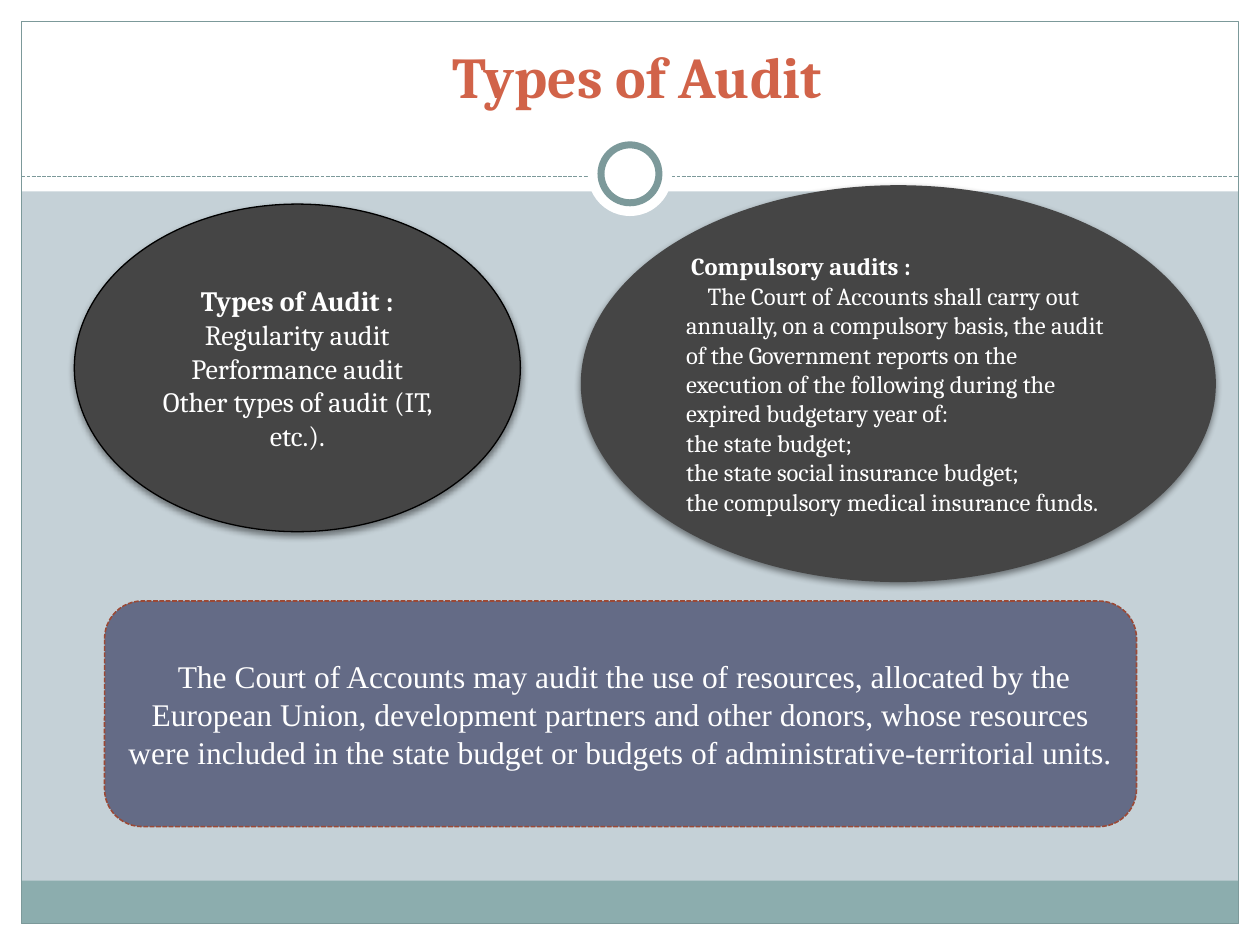
from lxml.etree import SubElement
from pptx import Presentation
from pptx.dml.color import RGBColor
from pptx.enum.dml import MSO_LINE_DASH_STYLE as Dash
from pptx.enum.shapes import MSO_CONNECTOR as Connector, MSO_SHAPE as Shape
from pptx.enum.text import MSO_ANCHOR as Anchor, PP_ALIGN as Align
from pptx.oxml.ns import qn
from pptx.util import Inches, Pt

WHITE = RGBColor(0xFF, 0xFF, 0xFF)
BLACK = RGBColor(0x00, 0x00, 0x00)
MIST = RGBColor(0xC5, 0xD1, 0xD7)
TEAL = RGBColor(0x8C, 0xAD, 0xAE)
DARK_TEAL = RGBColor(0x7C, 0x99, 0x9A)
CORAL = RGBColor(0xD1, 0x63, 0x49)
CHARCOAL = RGBColor(0x45, 0x45, 0x45)
SLATE = RGBColor(0x64, 0x6B, 0x86)
RUST = RGBColor(0x9B, 0x49, 0x36)

COLUMNS, ROWS = 100, 75
MARGIN = 1.7
AUDIT_TYPES = ["Regularity audit", "Performance audit", "Other types of audit (IT, etc.)."]
COMPULSORY_SCOPE = (
    "The Court of Accounts shall carry out annually, on a compulsory basis, the audit "
    "of the Government reports on the execution of the following during the expired "
    "budgetary year of:"
)
BUDGETS = [
    "the state budget;",
    "the state social insurance budget;",
    "the compulsory medical insurance funds.",
]
DONOR_AUDIT = (
    "The Court of Accounts may audit the use of resources, allocated by the European "
    "Union, development partners and other donors, whose resources were included in "
    "the state budget or budgets of administrative-territorial units."
)


def write_text(shape, lines, size, font="Cambria", color=WHITE, align=Align.CENTER,
               anchor=Anchor.MIDDLE, bold_first=True, indents=()):
    """Fill a shape with one paragraph per line; indents apply to the leading lines."""
    frame = shape.text_frame
    frame.word_wrap = True
    frame.vertical_anchor = anchor
    for index, line in enumerate(lines):
        paragraph = frame.add_paragraph() if index else frame.paragraphs[0]
        paragraph.text = line
        paragraph.alignment = align
        if index < len(indents):
            paragraph._p.get_or_add_pPr().set("indent", str(Inches(indents[index])))
        paragraph.font.name = font
        paragraph.font.size = Pt(size)
        paragraph.font.bold = bold_first and index == 0
        paragraph.font.color.rgb = color


class AuditSlide:
    """Holds the slide, its grid and the house style."""

    def __init__(self, presentation):
        self.slide = presentation.slides.add_slide(presentation.slide_layouts[6])
        self.column = presentation.slide_width / COLUMNS
        self.row = presentation.slide_height / ROWS
        self.slide.background.fill.solid()
        self.slide.background.fill.fore_color.rgb = MIST

    def place(self, left, top, width, height):
        return (round(left * self.column), round(top * self.row),
                round(width * self.column), round(height * self.row))

    def style_line(self, line, color, width, dash=None):
        line.color.rgb = color
        line.width = Pt(width)
        if dash:
            line.dash_style = dash

    def shape(self, kind, box, fill=None, line=None, width=0.75, dash=None):
        shape = self.slide.shapes.add_shape(kind, *self.place(*box))
        shape.shadow.inherit = False
        if fill is None:
            shape.fill.background()
        else:
            shape.fill.solid()
            shape.fill.fore_color.rgb = fill
        if line is None:
            shape.line.fill.background()
        else:
            self.style_line(shape.line, line, width, dash)
        return shape

    def circle(self, center_x, center_y, diameter, **style):
        box = (center_x - diameter / 2, center_y - diameter / 2, diameter, diameter)
        return self.shape(Shape.OVAL, box, **style)

    def shadowed_oval(self, box, line=None):
        oval = self.shape(Shape.OVAL, box, CHARCOAL, line)
        effects = oval._element.spPr.find(qn("a:effectLst"))
        shadow = SubElement(effects, qn("a:outerShdw"), blurRad=str(Pt(4)),
                            dist=str(Pt(2)), dir="5400000", rotWithShape="0")
        color = SubElement(shadow, qn("a:srgbClr"), val=str(BLACK))
        SubElement(color, qn("a:alpha"), val="45000")
        return oval

    def rule(self, left, right, y):
        start_x, start_y, end_x, end_y = self.place(left, y, right, y)
        rule = self.slide.shapes.add_connector(Connector.STRAIGHT, start_x, start_y, end_x, end_y)
        self.style_line(rule.line, DARK_TEAL, 0.75, Dash.SQUARE_DOT)
        SubElement(rule._element.spPr, qn("a:effectLst"))

    def text_box(self, box):
        return self.slide.shapes.add_textbox(*self.place(*box))

    def frame(self):
        inner_width, inner_height = COLUMNS - 2 * MARGIN, ROWS - 2 * MARGIN
        for band in ((0, ROWS - MARGIN, COLUMNS, MARGIN), (0, 0, COLUMNS, 15.2),
                     (0, 0, MARGIN, ROWS), (COLUMNS - MARGIN, 0, MARGIN, ROWS)):
            self.shape(Shape.RECTANGLE, band, WHITE)
        self.shape(Shape.RECTANGLE, (MARGIN, 69.9, inner_width, 3.4), TEAL)
        self.shape(Shape.RECTANGLE, (MARGIN, MARGIN, inner_width, inner_height), line=DARK_TEAL)
        self.rule(MARGIN, COLUMNS - MARGIN, 14)
        self.circle(COLUMNS / 2, 13.8, 6.7, fill=WHITE)
        self.circle(COLUMNS / 2, 13.8, 4.6, fill=WHITE, line=DARK_TEAL, width=4)


def main():
    presentation = Presentation()
    presentation.slide_width, presentation.slide_height = Inches(10), Inches(7.5)
    page = AuditSlide(presentation)
    page.frame()

    title = page.text_box((2.8, 2.5, 95.5, 6.7))
    write_text(title, ["Types of Audit"], 33, color=CORAL, anchor=Anchor.BOTTOM)

    types = page.shadowed_oval((5.9, 16.2, 35.4, 26), line=BLACK)
    write_text(types, ["Types of Audit :", *AUDIT_TYPES], 16)

    compulsory = page.shadowed_oval((46.1, 14.7, 50.4, 31.5))
    write_text(compulsory, ["Compulsory audits :", COMPULSORY_SCOPE, *BUDGETS], 14,
               align=Align.LEFT, indents=(0.04, 0.17))

    donors = page.shape(Shape.ROUNDED_RECTANGLE, (8.3, 47.7, 81.9, 17.9), SLATE,
                        RUST, 0.9, Dash.SQUARE_DOT)
    write_text(donors, [DONOR_AUDIT], 18, font="Times New Roman", bold_first=False,
               indents=(0.06,))

    presentation.save("out.pptx")


if __name__ == "__main__":
    main()
